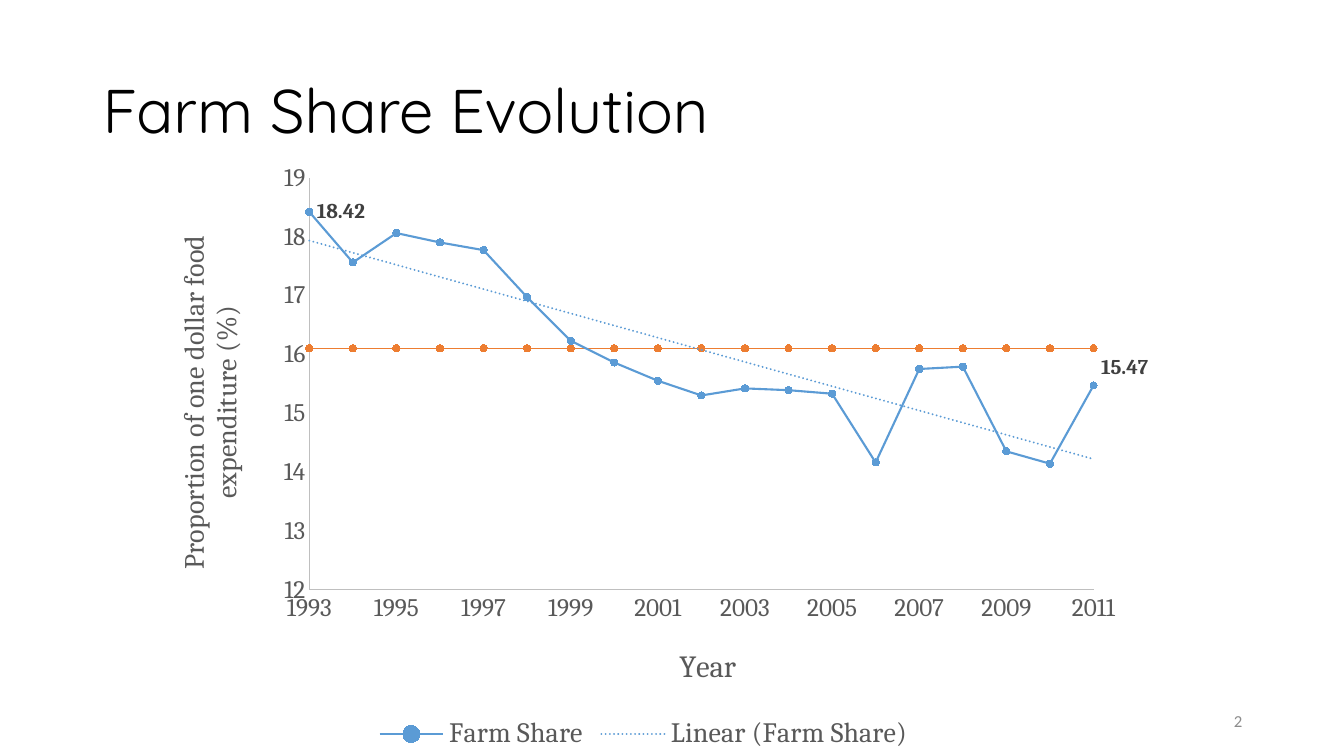
"""Build the Farm Share Evolution slide."""
import dataclasses

import pptx
import pptx.chart.data
import pptx.dml.color
import pptx.enum.chart
import pptx.enum.text
import pptx.oxml
import pptx.oxml.ns
import pptx.util

Inches = pptx.util.Inches
Pt = pptx.util.Pt
qn = pptx.oxml.ns.qn

YEARS = range(1993, 2012)
FARM_SHARE = [18.42, 17.56, 18.06, 17.9, 17.77, 16.97, 16.23, 15.86, 15.55, 15.3,
              15.42, 15.39, 15.33, 14.16, 15.75, 15.79, 14.35, 14.14, 15.47]
AVERAGE = 16.1


@dataclasses.dataclass(frozen=True)
class Theme:
    """Fonts, colours and type sizes."""
    title_font: str = "Quicksand"
    chart_font: str = "Cambria"
    number_font: str = "Calibri"
    black: str = "000000"
    text: str = "595959"
    label: str = "404040"
    number: str = "8C8C8C"
    axis: str = "BFBFBF"
    blue: str = "5B9BD5"
    orange: str = "ED7D31"
    title_size: int = 44
    year_size: int = 22
    legend_size: int = 20
    tick_size: int = 18
    label_size: int = 15
    number_size: int = 12


THEME = Theme()


def rgb(color):
    """Return an RGB colour from its hex text."""
    return pptx.dml.color.RGBColor.from_string(color)


def style_font(font, name, size, color, bold=False):
    """Set face, size, colour and weight."""
    font.name, font.size, font.bold = name, Pt(size), bold
    font.color.rgb = rgb(color)


def style_line(line, color, width):
    """Set a solid line."""
    line.color.rgb = rgb(color)
    line.width = Pt(width)


def chart_xml(body):
    """Parse one chart element, declaring its namespaces."""
    head, tail = body.split(">", 1)
    ns = pptx.oxml.ns.nsdecls("c", "a")
    slash = "/" if head.endswith("/") else ""
    return pptx.oxml.parse_xml(f"{head.rstrip('/')} {ns}{slash}>{tail}")


def place(parent, index, target="", **fractions):
    """Give a chart part a manual layout in fractions of the chart."""
    for old in parent.findall(qn("c:layout")):
        parent.remove(old)
    modes = "".join(f'<c:{k}Mode val="edge"/>' for k in "xy") if "w" in fractions or target == "edge" else ""
    inner = '<c:layoutTarget val="inner"/>' if target == "inner" else ""
    values = "".join(f'<c:{k} val="{v}"/>' for k, v in fractions.items())
    parent.insert(index, chart_xml(
        f"<c:layout><c:manualLayout>{inner}{modes}{values}</c:manualLayout></c:layout>"))


def add_text(slide, text, box, font, size, color, align, spacing=1.0):
    """Add a one-line text box, centred vertically."""
    tf = slide.shapes.add_textbox(*map(Inches, box)).text_frame
    tf.word_wrap = True
    tf.vertical_anchor = pptx.enum.text.MSO_ANCHOR.MIDDLE
    p = tf.paragraphs[0]
    p.text, p.alignment, p.line_spacing = text, align, spacing
    style_font(p.runs[0].font, font, size, color)


def style_axis(axis, low, high, step, title, size, x, y):
    """Set an axis scale, ticks, line and placed title."""
    axis.minimum_scale, axis.maximum_scale, axis.major_unit = low, high, step
    axis.has_major_gridlines = False
    axis.major_tick_mark = axis.minor_tick_mark = pptx.enum.chart.XL_TICK_MARK.NONE
    style_font(axis.tick_labels.font, THEME.chart_font, THEME.tick_size, THEME.text)
    style_line(axis.format.line, THEME.axis, 0.75)
    tf = axis.axis_title.text_frame
    tf.text = title
    style_font(tf.paragraphs[0].runs[0].font, THEME.chart_font, size, THEME.text)
    place(axis.axis_title._element, 1, "edge", x=x, y=y)


def style_series(series, color, width):
    """Set a straight line with round markers."""
    series.smooth = False
    style_line(series.format.line, color, width)
    series.marker.style = pptx.enum.chart.XL_MARKER_STYLE.CIRCLE
    series.marker.size = 5
    series.marker.format.fill.solid()
    series.marker.format.fill.fore_color.rgb = rgb(color)
    style_line(series.marker.format.line, color, 0.75)


def add_trendline(series):
    """Add a dotted linear trend line."""
    series._element.find(qn("c:xVal")).addprevious(chart_xml(
        '<c:trendline><c:spPr><a:ln w="19050" cap="rnd"><a:solidFill>'
        f'<a:srgbClr val="{THEME.blue}"/></a:solidFill><a:prstDash val="sysDot"/></a:ln></c:spPr>'
        '<c:trendlineType val="linear"/><c:dispRSqr val="0"/><c:dispEq val="0"/></c:trendline>'))


def label_point(series, index):
    """Show one point's value to its right."""
    label = series.points[index].data_label
    style_font(label.font, THEME.chart_font, THEME.label_size, THEME.label, bold=True)
    label.position = pptx.enum.chart.XL_LABEL_POSITION.RIGHT
    return label


def add_legend(chart):
    """Add the bottom legend without the average series."""
    chart.has_legend = True
    legend = chart.legend
    legend.position = pptx.enum.chart.XL_LEGEND_POSITION.BOTTOM
    legend.include_in_layout = False
    style_font(legend.font, THEME.chart_font, THEME.legend_size, THEME.text)
    legend._element.find(qn("c:legendPos")).addnext(chart_xml(
        '<c:legendEntry><c:idx val="1"/><c:delete val="1"/></c:legendEntry>'))


def add_share_chart(slide):
    """Add the farm share scatter chart."""
    data = pptx.chart.data.XyChartData()
    for name, values in (("Farm Share", FARM_SHARE), ("Series 2", [AVERAGE] * len(YEARS))):
        series = data.add_series(name)
        for year, value in zip(YEARS, values):
            series.add_data_point(year, value)
    chart = slide.shapes.add_chart(
        pptx.enum.chart.XL_CHART_TYPE.XY_SCATTER_LINES,
        Inches(1.39), Inches(1.5), Inches(10), Inches(6), data).chart
    chart.has_title = False
    style_font(chart.font, THEME.number_font, 10, THEME.black)
    plot = chart.plots[0]
    plot.vary_by_categories = False
    share, average = plot.series
    style_series(share, THEME.blue, 1.5)
    style_series(average, THEME.orange, 1)
    add_trendline(share)
    label_point(share, 0)
    last = len(YEARS) - 1
    label_point(share, last)
    last_label = share._element.findall(".//" + qn("c:dLbl"))[-1]
    place(last_label, 1, x=0, y=-0.03)
    style_axis(chart.category_axis, YEARS[0], YEARS[-1], 2, "Year", THEME.year_size, 0.53, 0.81)
    style_axis(chart.value_axis, 12, 19, 1, "Proportion of one dollar food expenditure (%)",
               THEME.legend_size, 0.03, 0.13)
    chart.value_axis.axis_title.text_frame._txBody.find(qn("a:bodyPr")).set("rot", "-5400000")
    add_legend(chart)
    place(chart._chartSpace.find(".//" + qn("c:plotArea")), 0, "inner",
          x=0.168, y=0.044, w=0.779, h=0.681)


def main():
    """Build and save the slide."""
    prs = pptx.Presentation()
    prs.slide_width, prs.slide_height = Inches(13.33), Inches(7.5)
    slide = prs.slides.add_slide(prs.slide_layouts[6])
    align = pptx.enum.text.PP_ALIGN
    add_text(slide, "Farm Share Evolution", (0.92, 0.4, 11.5, 1.45),
             THEME.title_font, THEME.title_size, THEME.black, align.LEFT, 0.9)
    add_share_chart(slide)
    add_text(slide, "2", (9.42, 6.95, 3, 0.4),
             THEME.number_font, THEME.number_size, THEME.number, align.RIGHT)
    prs.save("out.pptx")


if __name__ == "__main__":
    main()
